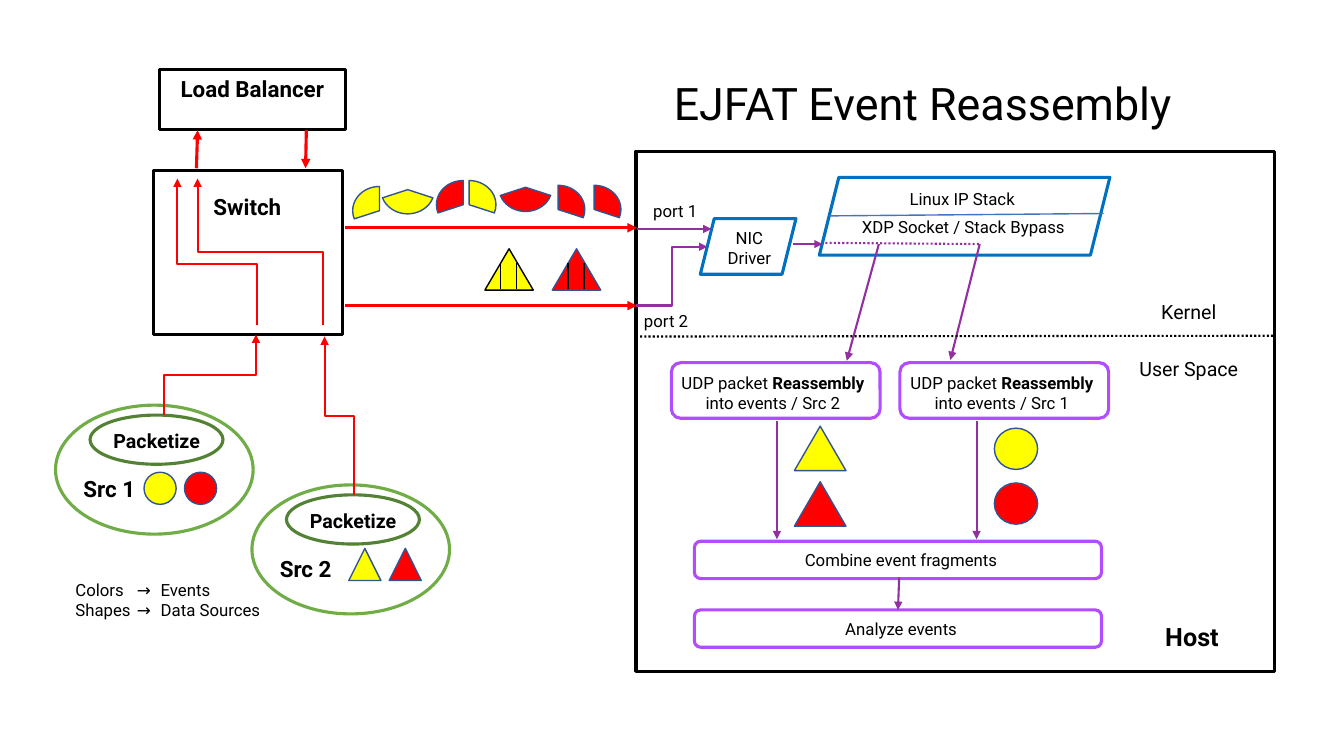
from lxml.etree import SubElement
from pptx import Presentation
from pptx.dml.color import RGBColor
from pptx.enum.dml import MSO_LINE
from pptx.enum.shapes import MSO_CONNECTOR, MSO_SHAPE
from pptx.enum.text import MSO_ANCHOR, PP_ALIGN
from pptx.oxml.ns import qn
from pptx.util import Cm, Pt

RED, YELLOW, BLACK, WHITE = "FF0000", "FFFF00", "000000", "FFFFFF"
PURPLE, VIOLET, BLUE, NAVY = "9230A0", "B24CFF", "0070C0", "325491"
RECT, ROUND, OVAL = MSO_SHAPE.RECTANGLE, MSO_SHAPE.ROUNDED_RECTANGLE, MSO_SHAPE.OVAL
TRIANGLE, SLANTED, PIE = MSO_SHAPE.ISOSCELES_TRIANGLE, MSO_SHAPE.PARALLELOGRAM, MSO_SHAPE.PIE

prs = Presentation()
prs.slide_width, prs.slide_height = Cm(33.87), Cm(19.05)
slide = prs.slides.add_slide(prs.slide_layouts[5])
shapes = slide.shapes


def color(value):
    return RGBColor.from_string(value)


def write(sp, text, size=12, bold=False, align=PP_ALIGN.CENTER, tabs=()):
    """Fill a shape with text; ** switches the weight, a newline starts a paragraph."""
    tf = sp.text_frame
    tf.word_wrap = True
    tf.vertical_anchor = MSO_ANCHOR.TOP
    for i, line in enumerate(text.split("\n")):
        p = tf.add_paragraph() if i else tf.paragraphs[0]
        p.alignment = align
        if tabs:
            stops = SubElement(p._p.get_or_add_pPr(), qn("a:tabLst"))
            for pos in tabs:
                SubElement(stops, qn("a:tab"), pos=str(Cm(pos)), algn="l")
        for j, part in enumerate(line.split("**")):
            r = p.add_run()
            r.text = part
            r.font.name, r.font.size = "Roboto", Pt(size)
            r.font.bold = bold or j % 2 == 1
            r.font.color.rgb = color(BLACK)


# Boxes: shape, left, top, width, height, fill, line colour, line width
boxes = [
    (RECT, 3.86, 4.29, 4.78, 4.14, None, BLACK, 2.25),
    (RECT, 4.01, 1.75, 4.7, 1.52, None, BLACK, 2.25),
    (RECT, 16.03, 3.81, 16.08, 13.11, WHITE, BLACK, 2.25),
    (SLANTED, 20.65, 4.47, 7.32, 1.96, None, BLUE, 2.25),
    (SLANTED, 17.65, 5.51, 2.41, 1.4, None, BLUE, 2.25),
    (ROUND, 16.92, 9.14, 5.26, 1.4, None, VIOLET, 2.25),
    (ROUND, 22.68, 9.14, 5.26, 1.4, None, VIOLET, 2.25),
    (ROUND, 17.5, 13.64, 10.26, 0.94, None, VIOLET, 2.25),
    (ROUND, 17.5, 15.37, 10.26, 0.94, None, VIOLET, 2.25),
    (TRIANGLE, 12.22, 6.27, 1.22, 1.04, YELLOW, BLACK, 1),
    (TRIANGLE, 13.92, 6.27, 1.22, 1.04, RED, NAVY, 1),
]

# Labels: text, left, top, width, format
labels = [
    ("Load Balancer", 3.68, 1.78, 5.36, dict(size=16, bold=True)),
    ("Switch", 4.85, 4.75, 2.77, dict(size=16, bold=True)),
    ("Host", 28.68, 15.54, 2.72, dict(size=18, bold=True)),
    ("port 1", 16.21, 4.93, 1.9, dict(align=PP_ALIGN.LEFT)),
    ("port 2", 15.98, 7.7, 1.9, dict(align=PP_ALIGN.LEFT)),
    ("NIC\nDriver", 17.83, 5.61, 2.11, {}),
    ("Linux IP Stack", 20.68, 4.62, 7.14, {}),
    ("XDP Socket / Stack Bypass", 20.29, 5.33, 7.98, {}),
    ("Kernel", 28.12, 7.44, 3.68, dict(size=14)),
    ("User Space", 28.12, 8.86, 3.68, dict(size=14)),
    ("UDP packet **Reassembly** into events / Src 2", 16.79, 9.27, 5.38, {}),
    ("UDP packet **Reassembly** into events / Src 1", 22.56, 9.27, 5.38, {}),
    ("Combine event fragments", 20.02, 13.74, 5.38, {}),
    ("Analyze events", 20.02, 15.47, 5.38, {}),
    ("Colors\t→\tEvents\nShapes\t→\tData Sources", 1.65, 14.48, 5.59,
     dict(align=PP_ALIGN.LEFT, tabs=(1.55, 2.15))),
]

# Data sources, each with its yellow and its red event
for name, x, y, event, event_x, event_y in [
    ("Src 1", 1.4, 10.21, OVAL, 3.63, 11.9),
    ("Src 2", 6.35, 12.22, TRIANGLE, 8.79, 13.82),
]:
    boxes += [
        (OVAL, x, y, 4.98, 3.25, None, "70AD47", 2.25),
        (OVAL, x + 0.87, y + 0.25, 3.35, 1.24, None, "548235", 2.25),
        (event, event_x, event_y, 0.81, 0.81, YELLOW, NAVY, 1),
        (event, event_x + 1.02, event_y, 0.81, 0.81, RED, NAVY, 1),
    ]
    labels += [
        (name, x + 0.3, y + 1.65, 2.11, dict(size=16, bold=True)),
        ("Packetize", x + 1.1, y + 0.48, 2.9, dict(size=14, bold=True)),
    ]

# Reassembled events
for i, fill in enumerate((YELLOW, RED)):
    boxes += [
        (TRIANGLE, 20.02, 10.74 + 1.4 * i, 1.3, 1.12, fill, NAVY, 1),
        (OVAL, 25.06, 10.79 + 1.38 * i, 1.09, 1.04, fill, NAVY, 1),
    ]

# Event fragments: left, top, fill, start and end angle
LEFT, BOTTOM, RIGHT = (162, 270), (18, 162), (270, 18)
slices = {}
for x, y, fill, angles in [
    (8.89, 4.7, YELLOW, LEFT), (9.6, 4.17, YELLOW, BOTTOM),
    (11, 4.55, RED, LEFT), (11.15, 4.55, YELLOW, RIGHT),
    (12.57, 4.11, RED, BOTTOM), (13.39, 4.67, RED, RIGHT), (14.3, 4.67, RED, RIGHT),
]:
    slices[len(boxes)] = angles
    boxes.append((PIE, x, y, 1.35, 1.22, fill, NAVY, 1))

for i, (kind, x, y, w, h, fill, line, width) in enumerate(boxes):
    sp = shapes.add_shape(kind, Cm(x), Cm(y), Cm(w), Cm(h))
    sp.shadow.inherit = False
    if fill:
        sp.fill.solid()
        sp.fill.fore_color.rgb = color(fill)
    else:
        sp.fill.background()
    sp.line.color.rgb = color(line)
    sp.line.width = Pt(width)
    for j, angle in enumerate(slices.get(i, ())):
        sp.adjustments[j] = angle * 0.6  # 60000ths of a degree over 100000

# Lines: x1, y1, x2, y2, colour, width, options
ARROW, DOTTED = dict(arrow=True), dict(dotted=True)
lines = [
    (8.69, 5.74, 16.05, 5.74, RED, 2.25, ARROW),
    (8.69, 7.7, 16.05, 7.7, RED, 2.25, ARROW),
    (7.72, 3.28, 7.7, 4.24, RED, 2.25, ARROW),
    (4.95, 4.24, 4.98, 3.28, RED, 2.25, ARROW),
    (4.14, 10.46, 6.45, 8.43, RED, 1.5, dict(arrow=True, bend="up")),
    (8.92, 12.47, 8.18, 8.48, RED, 1.5, dict(arrow=True, bend="up")),
    (8.13, 8.2, 4.98, 4.5, RED, 1.5, dict(arrow=True, bend="up")),
    (6.48, 8.2, 4.47, 4.5, RED, 1.5, dict(arrow=True, bend="up", middle=41700)),
    (16.03, 7.7, 17.83, 6.22, PURPLE, 1.5, dict(arrow=True, bend="across")),
    (16.05, 5.77, 17.93, 5.77, PURPLE, 1.5, ARROW),
    (19.99, 6.15, 20.73, 6.15, PURPLE, 1.5, ARROW),
    (22.15, 6.15, 21.34, 9.09, PURPLE, 1.5, ARROW),
    (24.69, 6.15, 23.95, 9.07, PURPLE, 1.5, ARROW),
    (19.58, 10.62, 19.58, 13.59, PURPLE, 1.5, ARROW),
    (24.61, 10.62, 24.61, 13.59, PURPLE, 1.5, ARROW),
    (22.66, 14.55, 22.63, 15.37, PURPLE, 1.5, ARROW),
    (20.9, 5.44, 27.81, 5.38, "4472C4", 1, {}),
    (20.8, 6.12, 24.71, 6.15, PURPLE, 1.5, DOTTED),
    (16.13, 8.48, 32.11, 8.46, BLACK, 1.5, DOTTED),
]
for x in (12.22, 13.92):
    for dx in (0.39, 0.8):
        lines.append((x + dx, 6.63, x + dx, 7.29, BLACK, 1, {}))

for x1, y1, x2, y2, line, width, opts in lines:
    bend = opts.get("bend")
    if bend == "up":  # lay the path out sideways, then turn it by 270 degrees
        cx, cy, dx, dy = (x1 + x2) / 2, (y1 + y2) / 2, (x2 - x1) / 2, (y1 - y2) / 2
        x1, y1, x2, y2 = cx - dy, cy - dx, cx + dy, cy + dx
    kind = MSO_CONNECTOR.ELBOW if bend else MSO_CONNECTOR.STRAIGHT
    cn = shapes.add_connector(kind, Cm(x1), Cm(y1), Cm(x2), Cm(y2))
    cn.line.color.rgb = color(line)
    cn.line.width = Pt(width)
    spPr = cn._element.spPr
    if bend == "up":
        spPr.find(qn("a:xfrm")).set("rot", "16200000")
    if "middle" in opts:
        guides = spPr.find(qn("a:prstGeom")).find(qn("a:avLst"))
        SubElement(guides, qn("a:gd"), name="adj1", fmla=f"val {opts['middle']}")
    if opts.get("dotted"):
        cn.line.dash_style = MSO_LINE.ROUND_DOT
    if opts.get("arrow"):
        SubElement(spPr.find(qn("a:ln")), qn("a:tailEnd"), type="triangle")
    SubElement(spPr, qn("a:effectLst"))

title = shapes.title
title.left, title.top, title.width, title.height = Cm(14.3), Cm(1.78), Cm(17.91), Cm(1.63)
write(title, "EJFAT Event Reassembly", size=32)
for text, x, y, w, fmt in labels:
    h = 1.27 if "\n" in text or "**" in text else 0.9
    write(shapes.add_textbox(Cm(x), Cm(y), Cm(w), Cm(h)), text, **fmt)

prs.save("out.pptx")
